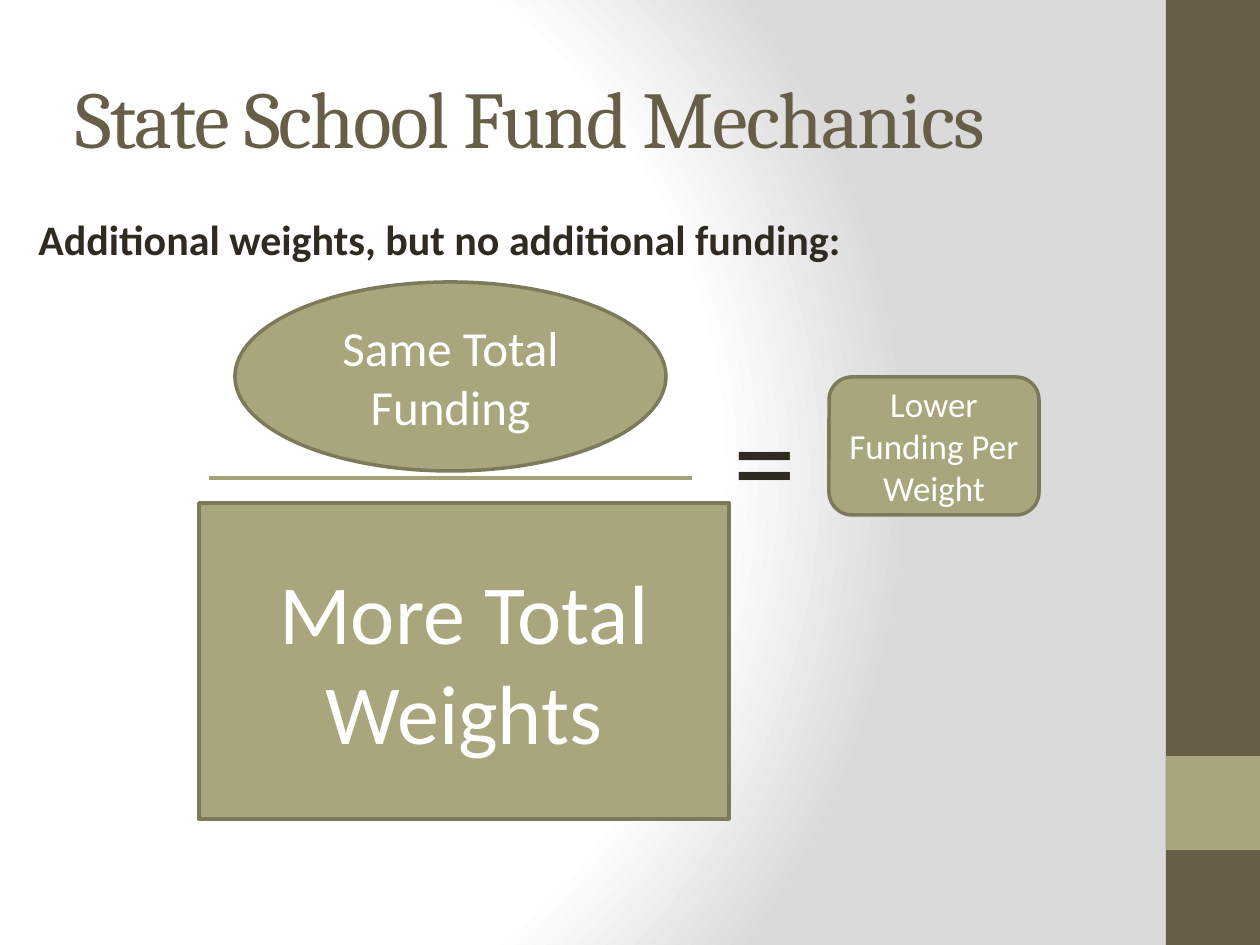
from lxml import etree
from pptx import Presentation
from pptx.dml.color import RGBColor
from pptx.enum.shapes import MSO_CONNECTOR, MSO_SHAPE
from pptx.enum.text import MSO_ANCHOR, MSO_AUTO_SIZE, PP_ALIGN
from pptx.oxml import parse_xml
from pptx.oxml.ns import nsdecls, qn
from pptx.util import Emu, Pt

SCALE = 914400 / 126
WIDE, HIGH = 1260, 945
BROWN = RGBColor(0x67, 0x5E, 0x47)
OLIVE = RGBColor(0xA9, 0xA5, 0x7C)
EDGE = RGBColor(0x7D, 0x7A, 0x5C)
RULE = RGBColor(0xA6, 0xA2, 0x78)
INK = RGBColor(0x2F, 0x2B, 0x20)
WHITE = RGBColor(0xFF, 0xFF, 0xFF)
SILVER = RGBColor(0xDA, 0xDA, 0xDA)
RECT, ROUND, OVAL = MSO_SHAPE.RECTANGLE, MSO_SHAPE.ROUNDED_RECTANGLE, MSO_SHAPE.OVAL
STRAIGHT = MSO_CONNECTOR.STRAIGHT
MIDDLE, TOP = MSO_ANCHOR.MIDDLE, MSO_ANCHOR.TOP
LEFT, CENTER = PP_ALIGN.LEFT, PP_ALIGN.CENTER
NONE, GROW = MSO_AUTO_SIZE.NONE, MSO_AUTO_SIZE.SHAPE_TO_FIT_TEXT

HEAD = {"name": "Cambria", "size": Pt(46), "bold": False}
NOTE = {"name": "Calibri", "size": Pt(24), "bold": True}
SIGN = {"name": "Calibri", "size": Pt(72), "bold": False}


def px(*vals):
    return [Emu(round(v * SCALE)) for v in vals]


def put(frame, text, font, color, align, body):
    for key, val in body.items():
        setattr(frame, key, val)
    para = frame.paragraphs[0]
    para.alignment = align
    run = para.add_run()
    run.text = text
    for key, val in font.items():
        setattr(run.font, key, val)
    run.font.color.rgb = color
    return run


def block(slide, kind, box, fill, edge=None):
    shape = slide.shapes.add_shape(kind, *px(*box))
    shape.shadow.inherit = False
    shape.fill.solid()
    shape.fill.fore_color.rgb = fill
    if edge is None:
        shape.line.fill.background()
    else:
        shape.line.color.rgb = edge
        shape.line.width = Pt(2)
    return shape


def term(slide, kind, box, text, size):
    shape = block(slide, kind, box, OLIVE, EDGE)
    font = {"name": "Calibri", "size": Pt(size)}
    body = {"word_wrap": True, "vertical_anchor": MIDDLE}
    put(shape.text_frame, text, font, WHITE, CENTER, body)


def label(slide, box, text, font):
    frame = slide.shapes.add_textbox(*px(*box)).text_frame
    body = {"word_wrap": False, "auto_size": GROW, "vertical_anchor": TOP}
    put(frame, text, font, INK, LEFT, body)


def backdrop(slide):
    stops = "".join(
        f'<a:gs pos="{pos * 1000}"><a:srgbClr val="{color}"/></a:gs>'
        for pos, color in ((0, WHITE), (75, WHITE), (100, SILVER))
    )
    back = parse_xml(
        f'<p:bg {nsdecls("p", "a")}><p:bgPr><a:gradFill rotWithShape="1">'
        f'<a:gsLst>{stops}</a:gsLst><a:path path="circle">'
        '<a:fillToRect l="20000" t="50000" r="100000" b="50000"/></a:path>'
        "</a:gradFill><a:effectLst/></p:bgPr></p:bg>"
    )
    slide.element.find(qn("p:cSld")).insert(0, back)


def sidebar(slide, box):
    x, y, w, h = box
    block(slide, RECT, box, BROWN)
    block(slide, RECT, (x, y + h * 4 // 5, w, w), OLIVE)


def heading(slide, box, text):
    title = slide.shapes.title
    for key, val in zip(("left", "top", "width", "height"), px(*box)):
        setattr(title, key, val)
    body = {"word_wrap": True, "auto_size": NONE, "vertical_anchor": MIDDLE}
    run = put(title.text_frame, text, HEAD, BROWN, LEFT, body)
    run.font.element.set("spc", "-100") if hasattr(run.font, "element") else \
        title.element.find(".//" + qn("a:rPr")).set("spc", "-100")


def ratio(slide, box):
    x, y, w, h = box
    mid = y + 196
    bar = slide.shapes.add_connector(STRAIGHT, *px(x + 10, mid, x + 493, mid))
    bar.line.color.rgb = RULE
    bar.line.width = Pt(2.5)
    etree.SubElement(bar.element.find(qn("p:spPr")), qn("a:effectLst"))
    term(slide, RECT, (x, y + 221, 530, h - 221), "More Total Weights", 48)
    label(slide, (x + 522, y + 92, 89, 165), "=", SIGN)
    term(slide, ROUND, (x + w - 210, y + 95, 210, 138), "Lower Funding Per Weight", 20)
    term(slide, OVAL, (x + 36, y, 431, 189), "Same Total Funding", 28)


def main():
    deck = Presentation()
    deck.slide_width, deck.slide_height = px(WIDE, HIGH)
    slide = deck.slides.add_slide(deck.slide_layouts[5])
    backdrop(slide)
    sidebar(slide, (1166, 0, 94, HIGH))
    heading(slide, (63, 38, 1050, 157), "State School Fund Mechanics")
    label(slide, (26, 207, 837, 63), "Additional weights, but no additional funding:", NOTE)
    ratio(slide, (199, 282, 840, 537))
    deck.save("out.pptx")


if __name__ == "__main__":
    main()
